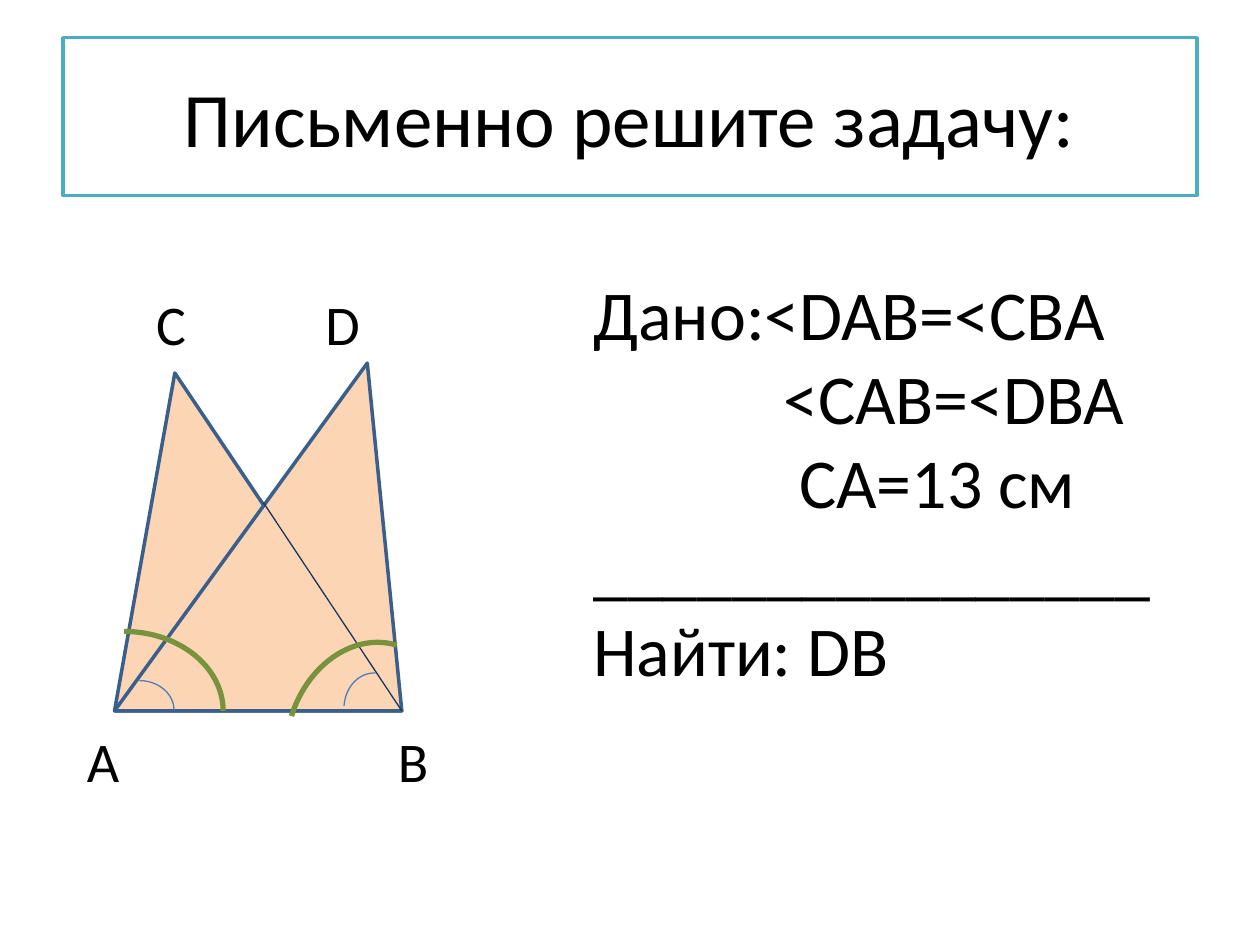
from dataclasses import dataclass
from typing import Any, Optional

from lxml import etree
from pptx import Presentation
from pptx import util as u
from pptx.dml.color import RGBColor
from pptx.enum import shapes, text
from pptx.oxml import ns

BLACK = RGBColor(0x00, 0x00, 0x00)
WHITE = RGBColor(0xFF, 0xFF, 0xFF)
TEAL = RGBColor(0x4B, 0xAC, 0xC6)
PEACH = RGBColor(0xFC, 0xD5, 0xB5)
BLUE = RGBColor(0x3A, 0x5F, 0x8C)
NAVY = RGBColor(0x17, 0x37, 0x5E)
SKY = RGBColor(0x4B, 0x7E, 0xBC)
GREEN = RGBColor(0x77, 0x93, 0x3C)

Box = tuple[float, float, float, float]
KIND = shapes.MSO_SHAPE


@dataclass
class Figure:
    kind: KIND
    box: Box
    color: RGBColor
    width: float
    fill: Optional[RGBColor] = None
    turn: float = 0
    apex: Optional[float] = None


@dataclass
class Row:
    words: str
    indent: float = 0
    tab: Optional[float] = None


@dataclass
class Label:
    box: Box
    size: int
    rows: list[Row]


TITLE = Figure(KIND.RECTANGLE, (1.27, 0.76, 22.86, 3.18), TEAL, 2, WHITE)
TRIANGLES = [
    Figure(KIND.ISOSCELES_TRIANGLE, (2.31, 7.52, 5.79, 6.81), BLUE, 2, PEACH, apex=0.21),
    Figure(KIND.ISOSCELES_TRIANGLE, (2.31, 7.32, 5.79, 7.01), BLUE, 2, PEACH, apex=0.88),
]
ARCS = [
    Figure(KIND.ARC, (2.11, 13.72, 1.4, 1.19), SKY, 0.75),
    Figure(KIND.ARC, (6.83, 13.67, 1.4, 1.19), SKY, 0.75, turn=273.6),
    Figure(KIND.ARC, (0.51, 12.73, 3.99, 3.2), GREEN, 3),
    Figure(KIND.ARC, (5.41, 13.31, 3.99, 3.2), GREEN, 3, turn=287.3),
]
LABELS = [
    Label((2.9, 5.72, 4.8, 1.63), 32, [Row("C\tD", tab=3.41)]),
    Label((1.5, 14.53, 8.41, 1.63), 32, [Row("A\tB", tab=6.27)]),
    Label((11.71, 5.33, 11.99, 8.81), 40, [
        Row("Дано:<DAB=<CBA"),
        Row("<CAB=<DBA", indent=3.83),
        Row("CA=13 cм", indent=4.15),
        Row("________________"),
        Row("Найти: DB"),
    ]),
]


def style(item: Any, values: dict[str, Any]) -> None:
    """Set each named attribute of the item."""
    for name, value in values.items():
        setattr(item, name, value)


def write(para: Any, words: str, size: int) -> None:
    """Add a black Calibri run to the paragraph."""
    run = para.add_run()
    run.text = words
    style(run.font, {"name": "Calibri", "size": u.Pt(size)})
    run.font.color.rgb = BLACK


def draw(slide: Any, fig: Figure) -> Any:
    """Draw one preset shape."""
    shape = slide.shapes.add_shape(fig.kind, *map(u.Cm, fig.box))
    shape.shadow.inherit = False
    shape.rotation = fig.turn
    if fig.apex is not None:
        shape.adjustments[0] = fig.apex
    if fig.fill is None:
        shape.fill.background()
    else:
        shape.fill.solid()
        shape.fill.fore_color.rgb = fig.fill
    shape.line.color.rgb = fig.color
    shape.line.width = u.Pt(fig.width)
    return shape


def side(slide: Any, start: tuple[float, float], end: tuple[float, float]) -> None:
    """Draw the hidden part of side CB as a thin line."""
    line = slide.shapes.add_connector(
        shapes.MSO_CONNECTOR.STRAIGHT, *map(u.Cm, start + end))
    line.line.color.rgb = NAVY
    line.line.width = u.Pt(0.75)
    etree.SubElement(line._element.spPr, ns.qn("a:effectLst"))


def label(slide: Any, note: Label) -> None:
    """Write a text box with its indents and tab stops."""
    frame = slide.shapes.add_textbox(*map(u.Cm, note.box)).text_frame
    style(frame, {"word_wrap": True, "auto_size": text.MSO_AUTO_SIZE.SHAPE_TO_FIT_TEXT})
    for i, row in enumerate(note.rows):
        para = frame.add_paragraph() if i else frame.paragraphs[0]
        props = para._p.get_or_add_pPr()
        if row.indent:
            props.set("marL", str(u.Cm(row.indent)))
        if row.tab is not None:
            tabs = etree.SubElement(props, ns.qn("a:tabLst"))
            etree.SubElement(tabs, ns.qn("a:tab"), pos=str(u.Cm(row.tab)), algn="l")
        write(para, row.words, note.size)


def main() -> None:
    """Build the geometry problem slide."""
    deck = Presentation()
    style(deck, {"slide_width": u.Cm(25.4), "slide_height": u.Cm(19.05)})
    slide = deck.slides.add_slide(deck.slide_layouts[6])
    frame = draw(slide, TITLE).text_frame
    style(frame, {"word_wrap": True, "vertical_anchor": text.MSO_ANCHOR.MIDDLE})
    frame.paragraphs[0].alignment = text.PP_ALIGN.CENTER
    write(frame.paragraphs[0], "Письменно решите задачу:", 44)
    for fig in TRIANGLES:
        draw(slide, fig)
    side(slide, (5.31, 10.13), (8.1, 14.33))
    for fig in ARCS:
        draw(slide, fig)
    for note in LABELS:
        label(slide, note)
    deck.save("out.pptx")


if __name__ == "__main__":
    main()
